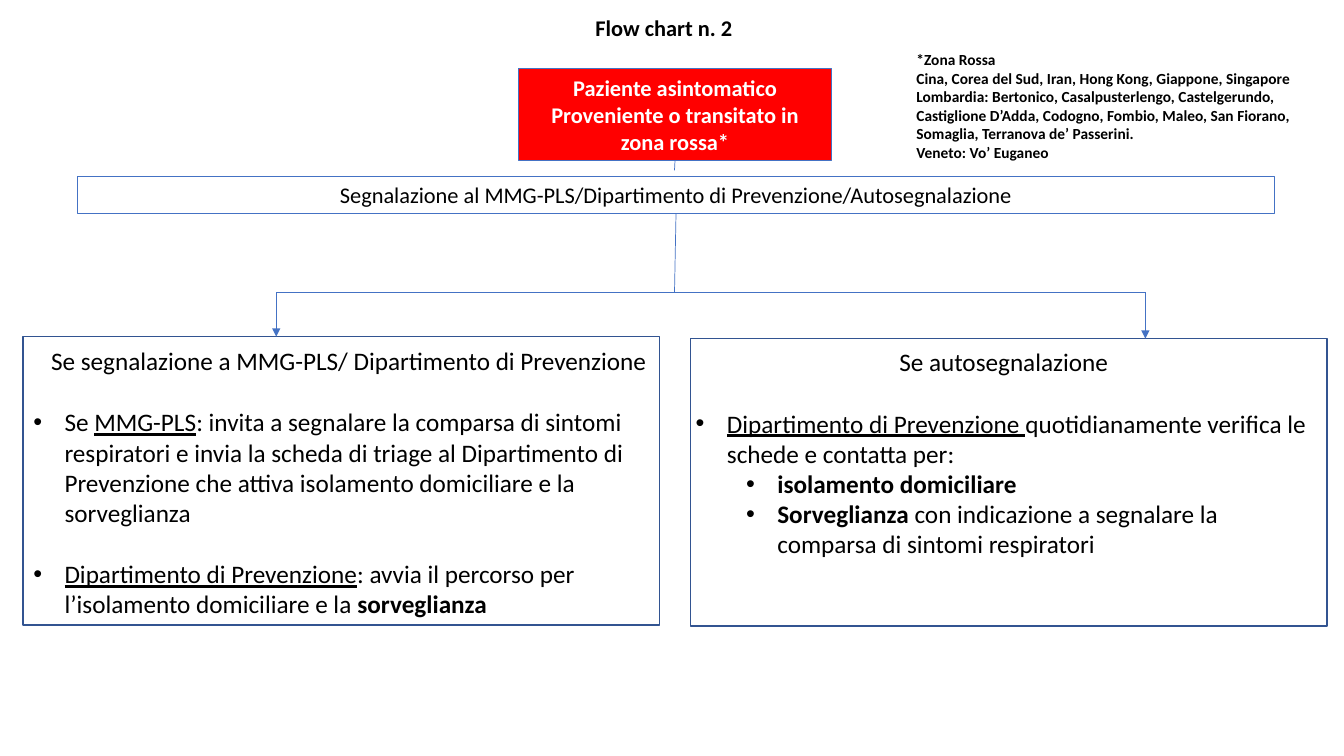
"""Build the flow chart slide for asymptomatic patients from the red zone."""
from dataclasses import dataclass
from typing import Optional

import pptx
import pptx.dml.color
import pptx.enum.shapes
import pptx.enum.text
import pptx.util
from lxml import etree
from pptx.oxml.ns import qn

EMU_PER_PX = 9144
LIST_INDENT = 31
SUBLIST_INDENT = 81


@dataclass(frozen=True)
class Theme:
    font: str = "Calibri"
    text: str = "000000"
    inverse: str = "FFFFFF"
    alert: str = "FF0000"
    flow: str = "4472C4"
    frame: str = "325491"
    note_size: int = 11
    step_size: int = 16
    list_size: int = 18
    list_gap: int = 22
    flow_width: float = 0.5
    step_width: float = 0.75
    frame_width: float = 1


@dataclass(frozen=True)
class Area:
    left: int
    top: int
    width: int
    height: int


@dataclass(frozen=True)
class Words:
    text: str
    bold: bool = False
    underline: bool = False


@dataclass(frozen=True)
class Line:
    runs: tuple[Words, ...]
    centred: bool = False
    indent: int = 0
    gap: int = 0


@dataclass(frozen=True)
class Box:
    area: Area
    border: str
    border_width: float
    fill: Optional[str] = None
    ink: str = "000000"
    lines: tuple[Line, ...] = ()


@dataclass(frozen=True)
class Link:
    start: tuple[int, int]
    end: tuple[int, int]
    arrow: bool = False
    source: Optional[int] = None


THEME = Theme()

TITLE = Line((Words("Flow chart n. 2", bold=True),), centred=True)

PATIENT, REPORT = 0, 1
BOXES = (
    Box(Area(514, 68, 311, 91), THEME.flow, THEME.step_width, THEME.alert, THEME.inverse, (
        Line((Words("Paziente asintomatico", bold=True),), centred=True),
        Line((Words("Proveniente o transitato in zona rossa*", bold=True),), centred=True),
    )),
    Box(Area(77, 175, 1187, 37), THEME.flow, THEME.step_width, lines=(
        Line((Words("Segnalazione al MMG-PLS/Dipartimento di Prevenzione/Autosegnalazione"),),
             centred=True),
    )),
    Box(Area(23, 334, 631, 286), THEME.frame, THEME.frame_width),
    Box(Area(685, 336, 631, 285), THEME.frame, THEME.frame_width),
)

LINKS = (
    Link((669, 159), (669, 169), source=PATIENT),
    Link((669, 212), (669, 290), source=REPORT),
    Link((274, 290), (1136, 290)),
    Link((274, 290), (274, 334), arrow=True),
    Link((1136, 290), (1136, 336), arrow=True),
)

BRANCHES = (
    (Area(23, 338, 646, 283), (
        Line((Words("Se segnalazione a MMG-PLS/ Dipartimento di Prevenzione"),), centred=True),
        Line((Words("Se "), Words("MMG-PLS", underline=True),
              Words(": invita a segnalare la comparsa di sintomi respiratori e invia la scheda "
                    "di triage al Dipartimento di Prevenzione che attiva isolamento domiciliare "
                    "e la sorveglianza")), indent=LIST_INDENT, gap=THEME.list_gap),
        Line((Words("Dipartimento di Prevenzione", underline=True),
              Words(": avvia il percorso per l’isolamento domiciliare e la "),
              Words("sorveglianza", bold=True)), indent=LIST_INDENT, gap=THEME.list_gap),
    )),
    (Area(680, 339, 631, 222), (
        Line((Words("Se autosegnalazione"),), centred=True),
        Line((Words("Dipartimento di Prevenzione ", underline=True),
              Words("quotidianamente verifica le schede e contatta per:")),
             indent=LIST_INDENT, gap=THEME.list_gap),
        Line((Words("isolamento domiciliare", bold=True),), indent=SUBLIST_INDENT),
        Line((Words("Sorveglianza ", bold=True),
              Words("con indicazione a segnalare la comparsa di sintomi respiratori")),
             indent=SUBLIST_INDENT),
    )),
)

RED_ZONE = tuple(Line((Words(text, bold=True),)) for text in (
    "*Zona Rossa",
    "Cina, Corea del Sud, Iran, Hong Kong, Giappone, Singapore",
    "Lombardia: Bertonico, Casalpusterlengo, Castelgerundo, Castiglione D’Adda, Codogno, "
    "Fombio, Maleo, San Fiorano, Somaglia, Terranova de’ Passerini.",
    "Veneto: Vo’ Euganeo",
))


def px(length: int) -> pptx.util.Emu:
    return pptx.util.Emu(length * EMU_PER_PX)


def rgb(colour: str) -> pptx.dml.color.RGBColor:
    return pptx.dml.color.RGBColor.from_string(colour)


def corners(area: Area) -> tuple[pptx.util.Emu, ...]:
    return px(area.left), px(area.top), px(area.width), px(area.height)


def place(holder, area: Area) -> None:
    holder.left, holder.top, holder.width, holder.height = corners(area)


def write(frame, lines: tuple[Line, ...], size: int, ink: str = THEME.text,
          anchor=pptx.enum.text.MSO_ANCHOR.TOP) -> None:
    frame.word_wrap = True
    frame.auto_size = pptx.enum.text.MSO_AUTO_SIZE.NONE
    frame.vertical_anchor = anchor
    align = pptx.enum.text.PP_ALIGN
    for number, line in enumerate(lines):
        paragraph = frame.add_paragraph() if number else frame.paragraphs[0]
        paragraph.alignment = align.CENTER if line.centred else align.LEFT
        paragraph.level = int(line.indent == SUBLIST_INDENT)
        paragraph.space_before = pptx.util.Pt(line.gap)
        properties = paragraph._p.get_or_add_pPr()
        properties.set("marL", str(px(line.indent)))
        properties.set("indent", str(-px(LIST_INDENT) if line.indent else 0))
        if line.indent:
            etree.SubElement(properties, qn("a:buFont"), typeface="Arial")
            etree.SubElement(properties, qn("a:buChar"), char="•")
        else:
            etree.SubElement(properties, qn("a:buNone"))
        for words in line.runs:
            run = paragraph.add_run()
            run.text = words.text
            run.font.name = THEME.font
            run.font.size = pptx.util.Pt(size)
            run.font.bold = words.bold
            run.font.underline = words.underline
            run.font.color.rgb = rgb(ink)


def draw_box(slide, box: Box):
    shape = slide.shapes.add_shape(pptx.enum.shapes.MSO_SHAPE.RECTANGLE, *corners(box.area))
    shape.shadow.inherit = False
    if box.fill:
        shape.fill.solid()
        shape.fill.fore_color.rgb = rgb(box.fill)
    else:
        shape.fill.background()
    shape.line.color.rgb = rgb(box.border)
    shape.line.width = pptx.util.Pt(box.border_width)
    write(shape.text_frame, box.lines, THEME.step_size, box.ink,
          pptx.enum.text.MSO_ANCHOR.MIDDLE)
    return shape


def draw_link(slide, link: Link, steps: list) -> None:
    connector = slide.shapes.add_connector(
        pptx.enum.shapes.MSO_CONNECTOR.STRAIGHT, *map(px, link.start + link.end))
    if link.source is not None:
        connector.begin_connect(steps[link.source], 2)
    connector.line.color.rgb = rgb(THEME.flow)
    connector.line.width = pptx.util.Pt(THEME.flow_width)
    if link.arrow:
        etree.SubElement(connector.line._get_or_add_ln(), qn("a:tailEnd"), type="triangle")
    etree.SubElement(connector._element.spPr, qn("a:effectLst"))


def main() -> None:
    deck = pptx.Presentation()
    deck.slide_width, deck.slide_height = px(1333), px(750)
    slide = deck.slides.add_slide(deck.slide_layouts.get_by_name("Two Content"))
    title, *bodies = slide.placeholders
    place(title, Area(110, 9, 1097, 64))
    write(title.text_frame, (TITLE,), THEME.step_size)
    for body, (area, lines) in zip(bodies, BRANCHES):
        place(body, area)
        write(body.text_frame, lines, THEME.list_size)
    steps = [draw_box(slide, box) for box in BOXES]
    for link in LINKS:
        draw_link(slide, link, steps)
    note = slide.shapes.add_textbox(*corners(Area(899, 45, 402, 121)))
    write(note.text_frame, RED_ZONE, THEME.note_size)
    deck.save("out.pptx")


if __name__ == "__main__":
    main()
